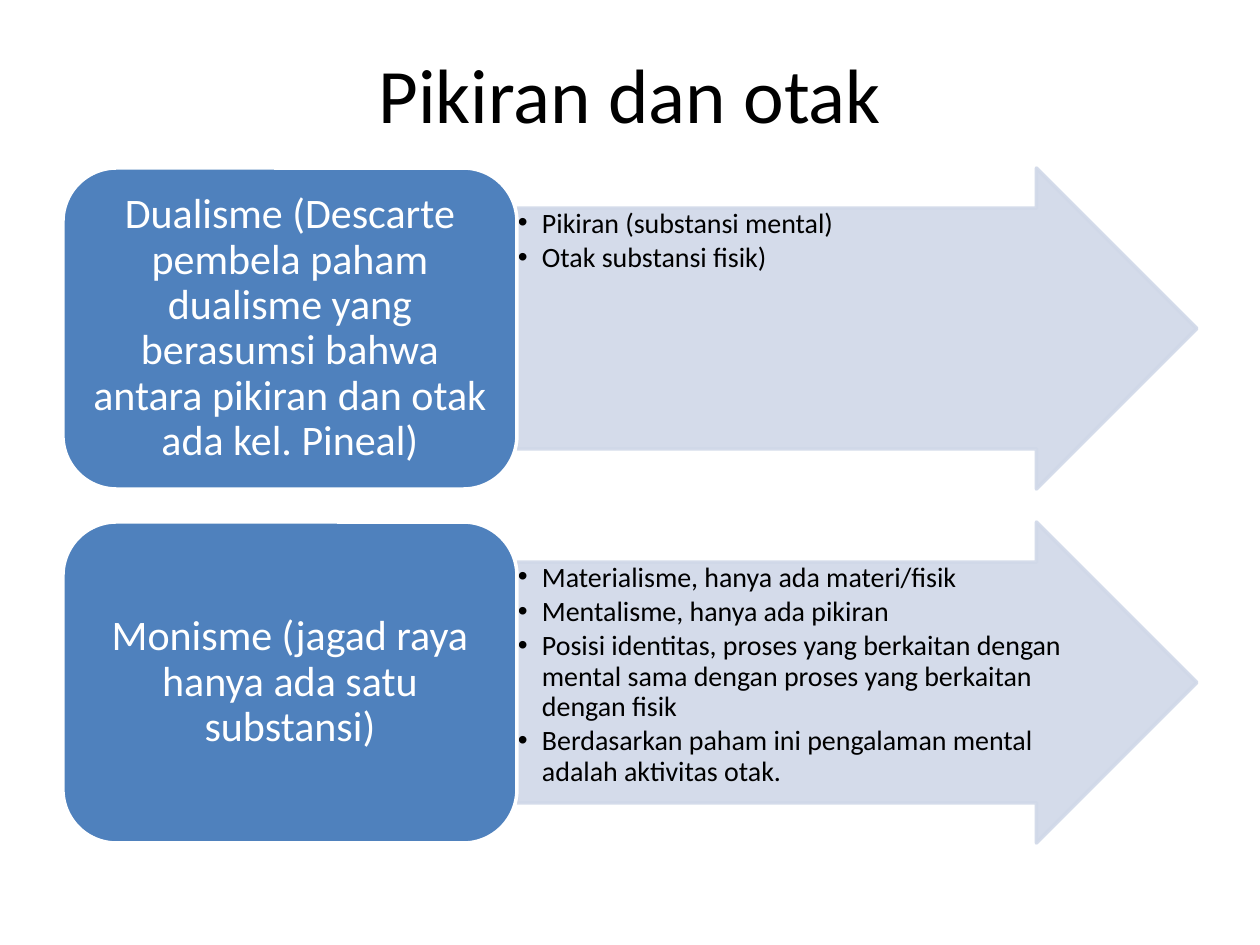
from dataclasses import dataclass

from lxml.etree import SubElement
from pptx import Presentation
from pptx.dml.color import RGBColor
from pptx.enum.shapes import MSO_SHAPE
from pptx.enum.text import MSO_ANCHOR, PP_ALIGN
from pptx.oxml.ns import qn
from pptx.util import Pt

EMU_PER_PX = 914400 / 126
FONT = "Calibri"
BLUE, PALE_BLUE, WHITE, BLACK = "4F81BD", "D0D8E8", "FFFFFF", "000000"

# Layout in px
LEFT, TOP = 63, 168
ROW_HEIGHT, ROW_PITCH = 321, 354
BOX_WIDTH, ARROW_WIDTH = 454, 680
ARROW_LEFT = LEFT + BOX_WIDTH
SHAFT_INSET = ROW_HEIGHT // 8
LIST_WIDTH = ARROW_WIDTH - ROW_HEIGHT * 3 // 8
BULLET_INDENT = 24


@dataclass
class View:
    heading: str
    points: list[str]


VIEWS = [
    View(
        "Dualisme (Descarte pembela paham dualisme yang berasumsi bahwa "
        "antara pikiran dan otak ada kel. Pineal)",
        ["Pikiran (substansi mental)", "Otak substansi fisik)"],
    ),
    View(
        "Monisme (jagad raya hanya ada satu substansi)",
        [
            "Materialisme, hanya ada materi/fisik",
            "Mentalisme, hanya ada pikiran",
            "Posisi identitas, proses yang berkaitan dengan mental sama "
            "dengan proses yang berkaitan dengan fisik",
            "Berdasarkan paham ini pengalaman mental adalah aktivitas otak.",
        ],
    ),
]


def px(length: int) -> int:
    return round(length * EMU_PER_PX)


def color(hex_value: str) -> RGBColor:
    return RGBColor.from_string(hex_value)


def style_paragraph(paragraph, text: str, size: int, hex_value: str) -> None:
    paragraph.text = text
    paragraph.font.name = FONT
    paragraph.font.size = Pt(size)
    paragraph.font.color.rgb = color(hex_value)


def add_text_box(slide, left: int, top: int, width: int, height: int):
    frame = slide.shapes.add_textbox(px(left), px(top), px(width), px(height)).text_frame
    frame.word_wrap = True
    return frame


def add_block(slide, kind, left: int, top: int, width: int, fill: str, line: str):
    shape = slide.shapes.add_shape(kind, px(left), px(top), px(width), px(ROW_HEIGHT))
    shape.shadow.inherit = False
    shape.fill.solid()
    shape.fill.fore_color.rgb = color(fill)
    shape.line.color.rgb = color(line)
    shape.line.width = Pt(2)
    return shape


def add_arrow(slide, top: int) -> None:
    arrow = add_block(slide, MSO_SHAPE.RIGHT_ARROW, ARROW_LEFT, top, ARROW_WIDTH,
                      PALE_BLUE, PALE_BLUE)
    arrow.adjustments[0] = 0.75
    arrow.adjustments[1] = 0.5
    # 90 % opacity on both fill and outline
    for rgb in arrow._element.spPr.iter(qn("a:srgbClr")):
        SubElement(rgb, qn("a:alpha"), val="90000")


def add_points(slide, top: int, points: list[str]) -> None:
    frame = add_text_box(slide, ARROW_LEFT, top + SHAFT_INSET, LIST_WIDTH,
                         ROW_HEIGHT - 2 * SHAFT_INSET)
    frame.margin_left = frame.margin_right = px(1)
    frame.margin_top = frame.margin_bottom = px(1)
    for index, point in enumerate(points):
        paragraph = frame.add_paragraph() if index else frame.paragraphs[0]
        style_paragraph(paragraph, point, 16, BLACK)
        paragraph.level = 1
        paragraph.line_spacing = 0.9
        paragraph.space_after = Pt(2.4)
        properties = paragraph._p.get_or_add_pPr()
        properties.set("marL", str(px(BULLET_INDENT)))
        properties.set("indent", str(-px(BULLET_INDENT)))
        SubElement(properties, qn("a:buFont"), typeface="Arial")
        SubElement(properties, qn("a:buChar"), char="•")
        # The schema wants the run defaults after the bullet
        properties.append(properties.find(qn("a:defRPr")))


def add_heading(slide, top: int, heading: str) -> None:
    box = add_block(slide, MSO_SHAPE.ROUNDED_RECTANGLE, LEFT, top, BOX_WIDTH, BLUE, WHITE)
    frame = box.text_frame
    frame.word_wrap = True
    frame.vertical_anchor = MSO_ANCHOR.MIDDLE
    paragraph = frame.paragraphs[0]
    style_paragraph(paragraph, heading, 24, WHITE)
    paragraph.alignment = PP_ALIGN.CENTER
    paragraph.line_spacing = 0.9


def main() -> None:
    presentation = Presentation()
    presentation.slide_width, presentation.slide_height = px(1260), px(945)
    slide = presentation.slides.add_slide(presentation.slide_layouts[6])

    # Title
    title = add_text_box(slide, LEFT, 38, 1134, 110)
    title.vertical_anchor = MSO_ANCHOR.MIDDLE
    style_paragraph(title.paragraphs[0], "Pikiran dan otak", 44, BLACK)
    title.paragraphs[0].alignment = PP_ALIGN.CENTER

    # One row per view
    for row, view in enumerate(VIEWS):
        top = TOP + row * ROW_PITCH
        add_arrow(slide, top)
        add_points(slide, top, view.points)
        add_heading(slide, top, view.heading)

    presentation.save("out.pptx")


if __name__ == "__main__":
    main()
